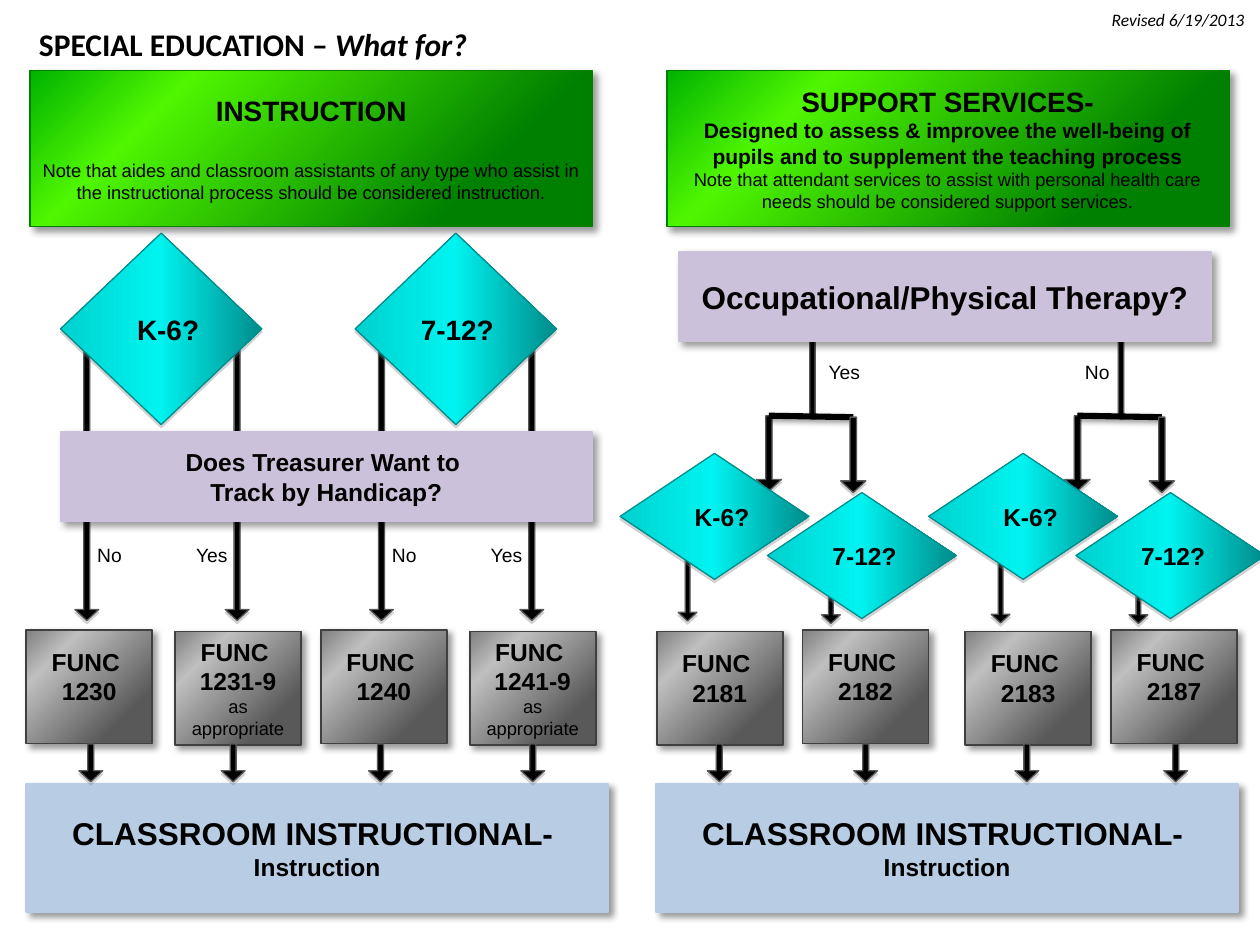
from dataclasses import dataclass

from lxml.etree import SubElement
from pptx import Presentation
from pptx.dml.color import RGBColor
from pptx.enum.shapes import MSO_CONNECTOR, MSO_SHAPE
from pptx.enum.text import MSO_ANCHOR, MSO_AUTO_SIZE, PP_ALIGN
from pptx.oxml.ns import qn
from pptx.util import Cm, Pt


@dataclass(frozen=True)
class Theme:
    ink: str = "000000"
    arrow_edge: str = "595959"
    purple: str = "CCC1DA"
    blue: str = "B8CCE4"
    green_edge: str = "008000"
    gray_edge: str = "404040"
    cyan_edge: str = "008C8B"
    green: tuple = ((22, "008000"), (77, "4FF600"), (100, "00B300"))
    gray: tuple = ((22, "595959"), (77, "BFBFBF"), (100, "808080"))
    cyan: tuple = ((0, "00D1CF"), (49, "00F3F0"), (100, "008C8B"))
    box_shadow: tuple = ("000000", 40, 4, 3, 45)
    soft_shadow: tuple = ("808080", 35, 0, 1.8, 90)
    line_shadow: tuple = ("000000", 38, 3.1, 1.6, 90)
    heading: float = 18
    subheading: float = 16
    body: float = 14
    detail: float = 12
    label: float = 11
    note: float = 10.5
    date: float = 10


THEME = Theme()


def font_format(size, bold=False, italic=False, name="Arial"):
    return {"size": Pt(size), "bold": bold, "italic": italic, "name": name}


HEADING = font_format(THEME.heading, bold=True)
SUBHEADING = font_format(THEME.subheading, bold=True)
BODY = font_format(THEME.body, bold=True)
DETAIL = font_format(THEME.detail, bold=True)
LABEL = font_format(THEME.label)
NOTE = font_format(THEME.note)
TITLE = font_format(THEME.heading, bold=True, name="Calibri")
TITLE_ITALIC = font_format(THEME.heading, bold=True, italic=True, name="Calibri")
DATE = font_format(THEME.date, italic=True, name="Calibri")


def apply(target, values):
    for name, value in values.items():
        setattr(target, name, value)


class FlowSlide:
    def __init__(self, slide, theme):
        self.slide = slide
        self.theme = theme

    def add_words(self, paragraph, text, values):
        run = paragraph.add_run()
        run.text = text
        apply(run.font, values)
        run.font.color.rgb = RGBColor.from_string(self.theme.ink)

    def fill_text(self, frame, lines, align, **frame_format):
        apply(frame, {"word_wrap": True, **frame_format})
        for number, (text, values) in enumerate(lines):
            paragraph = frame.add_paragraph() if number else frame.paragraphs[0]
            paragraph.alignment = align
            self.add_words(paragraph, text, values)

    def cast_shadow(self, effects, shadow):
        color, alpha, blur, distance, angle = shadow
        outer = SubElement(effects, qn("a:outerShdw"), blurRad=str(Pt(blur)), dist=str(Pt(distance)),
                           dir=str(angle * 60000), rotWithShape="0")
        tint = SubElement(outer, qn("a:srgbClr"), val=color)
        SubElement(tint, qn("a:alpha"), val=str(alpha * 1000))

    def paint(self, shape, fill, edge, width, shadow, angle=0):
        properties = shape._element.spPr
        if isinstance(fill, str):
            shape.fill.solid()
            shape.fill.fore_color.rgb = RGBColor.from_string(fill)
        else:
            shape.fill.gradient()
            shape.fill.gradient_angle = angle
            stops = properties.find(qn("a:gradFill")).find(qn("a:gsLst"))
            stops.clear()
            for position, color in fill:
                stop = SubElement(stops, qn("a:gs"), pos=str(position * 1000))
                SubElement(stop, qn("a:srgbClr"), val=color)
        shape.line.color.rgb = RGBColor.from_string(edge)
        shape.line.width = Pt(width)
        shape.shadow.inherit = False
        self.cast_shadow(properties.find(qn("a:effectLst")), shadow)

    def add(self, preset, left, top, width, height):
        return self.slide.shapes.add_shape(preset, Cm(left), Cm(top), Cm(width), Cm(height))

    def title(self, left, top, width, height, parts):
        heading = self.slide.shapes.title
        apply(heading, {"left": Cm(left), "top": Cm(top), "width": Cm(width), "height": Cm(height)})
        apply(heading.text_frame, {"vertical_anchor": MSO_ANCHOR.TOP, "word_wrap": True,
                                   "auto_size": MSO_AUTO_SIZE.NONE})
        paragraph = heading.text_frame.paragraphs[0]
        paragraph.alignment = PP_ALIGN.LEFT
        for text, values in parts:
            self.add_words(paragraph, text, values)

    def text(self, left, top, width, height, line, align=PP_ALIGN.CENTER):
        caption = self.slide.shapes.add_textbox(Cm(left), Cm(top), Cm(width), Cm(height))
        self.fill_text(caption.text_frame, [line], align)

    def box(self, left, top, width, height, lines, fill, edge, gap_after_first=0, bottom=0.13):
        panel = self.add(MSO_SHAPE.RECTANGLE, left, top, width, height)
        self.paint(panel, fill, edge, 1, self.theme.box_shadow, angle=135)
        self.fill_text(panel.text_frame, lines, PP_ALIGN.CENTER,
                       vertical_anchor=MSO_ANCHOR.MIDDLE, margin_bottom=Cm(bottom))
        if gap_after_first:
            panel.text_frame.paragraphs[0].space_after = Pt(gap_after_first)

    def function_box(self, left, top, code, note=None):
        lines = [("FUNC ", BODY), (code, BODY)] + ([(note, NOTE)] if note else [])
        self.box(left, top, 2.54, 2.29, lines, self.theme.gray, self.theme.gray_edge,
                 bottom=0.13 if note else 0.55)

    def diamond(self, left, top, width, height, line):
        decision = self.add(MSO_SHAPE.DIAMOND, left, top, width, height)
        self.paint(decision, self.theme.cyan, self.theme.cyan_edge, 0.75, self.theme.soft_shadow)
        self.fill_text(decision.text_frame, [line], PP_ALIGN.RIGHT, vertical_anchor=MSO_ANCHOR.MIDDLE)

    def arrow(self, center, top, length, thickness, rotation=90):
        pointer = self.add(MSO_SHAPE.RIGHT_ARROW, center - length / 2,
                           top + (length - thickness) / 2, length, thickness)
        pointer.rotation = rotation
        pointer.adjustments[0], pointer.adjustments[1] = 0.25, 0.46
        self.paint(pointer, self.theme.ink, self.theme.arrow_edge, 0.75, self.theme.soft_shadow)

    def line(self, x1, y1, x2, y2):
        bar = self.slide.shapes.add_connector(MSO_CONNECTOR.STRAIGHT, Cm(x1), Cm(y1), Cm(x2), Cm(y2))
        bar.line.color.rgb = RGBColor.from_string(self.theme.ink)
        bar.line.width = Pt(3.5)
        self.cast_shadow(SubElement(bar._element.spPr, qn("a:effectLst")), self.theme.line_shadow)

    def support_branch(self, left, answer, answer_offset, codes):
        self.arrow(left + 3.88, 6.43, 1.96, 0.43, rotation=270)
        self.arrow(left + 3, 8.38, 1.52, 0.51)
        self.line(left + 4.7, 8.41, left + 3, 8.38)
        self.diamond(left + 2.97, 9.93, 3.81, 2.54, ("7-12?", BODY))
        self.function_box(left + 0.74, 12.73, codes[0])
        self.function_box(left + 3.68, 12.7, codes[1])
        self.diamond(left, 9.14, 3.81, 2.54, ("K-6?", BODY))
        self.arrow(left + 4.7, 8.41, 1.52, 0.51)
        self.text(left + answer_offset, 7.14, 1.42, 0.71, (answer, LABEL))

    def instruction_branch(self, left, grades, codes):
        self.arrow(left + 0.53, 6.72, 5.79, 0.48)
        self.text(left + 0.28, 10.82, 1.42, 0.8, ("No", LABEL))
        self.arrow(left + 3.56, 6.77, 5.74, 0.48)
        self.text(left + 2.34, 10.82, 1.42, 0.8, ("Yes", LABEL))
        self.diamond(left, 4.7, 4.06, 3.86, (grades, SUBHEADING))
        self.function_box(left + 2.31, 12.73, codes[1], "as appropriate")
        self.function_box(left - 0.69, 12.7, codes[0])


def main():
    deck = Presentation()
    apply(deck, {"slide_width": Cm(25.4), "slide_height": Cm(19.05)})
    flow = FlowSlide(deck.slides.add_slide(deck.slide_layouts[5]), THEME)

    flow.title(0.53, 0.38, 18.5, 1.02, [("SPECIAL EDUCATION – ", TITLE), ("What for?", TITLE_ITALIC)])
    flow.text(19.41, 0.05, 5.92, 1.02, ("Revised 6/19/2013", DATE), PP_ALIGN.RIGHT)

    for center, top, length in ((13.86, 11.07, 1.45), (16.75, 11.38, 1.19),
                                (20.17, 11.19, 1.37), (22.95, 11.38, 1.19)):
        flow.arrow(center, top, length, 0.38)
    flow.support_branch(18.72, "No", 2.69, ("2183", "2187"))
    flow.support_branch(12.5, "Yes", 3.81, ("2181", "2182"))

    flow.box(13.44, 1.42, 11.33, 3.15, [
        ("SUPPORT SERVICES-", SUBHEADING),
        ("Designed to assess & improvee the well-being of pupils and to supplement the teaching process", DETAIL),
        ("Note that attendant services to assist with personal health care needs "
         "should be considered support services.", NOTE),
    ], THEME.green, THEME.green_edge)
    flow.box(0.61, 1.42, 11.33, 3.15, [
        ("INSTRUCTION", SUBHEADING),
        ("Note that aides and classroom assistants of any type who assist "
         "in the instructional process should be considered instruction.", NOTE),
    ], THEME.green, THEME.green_edge, gap_after_first=18.4)

    flow.instruction_branch(1.22, "K-6?", ("1230", "1231-9"))
    flow.instruction_branch(7.16, "7-12?", ("1240", "1241-9"))
    flow.box(1.22, 8.71, 10.72, 1.8, [("Does Treasurer Want to ", BODY), ("Track by Handicap?", BODY)],
             THEME.purple, THEME.purple)
    flow.box(13.69, 5.08, 10.72, 1.8, [("Occupational/Physical Therapy?", HEADING)],
             THEME.purple, THEME.purple)

    for left in (0.53, 13.23):
        flow.box(left, 15.8, 11.73, 2.59, [("CLASSROOM INSTRUCTIONAL- ", HEADING), ("Instruction", BODY)],
                 THEME.blue, THEME.blue)
    for center in (1.83, 4.7, 7.67, 10.74, 14.5, 17.45, 20.7, 23.7):
        flow.arrow(center, 15, 0.76, 0.48)

    deck.save("out.pptx")


if __name__ == "__main__":
    main()
